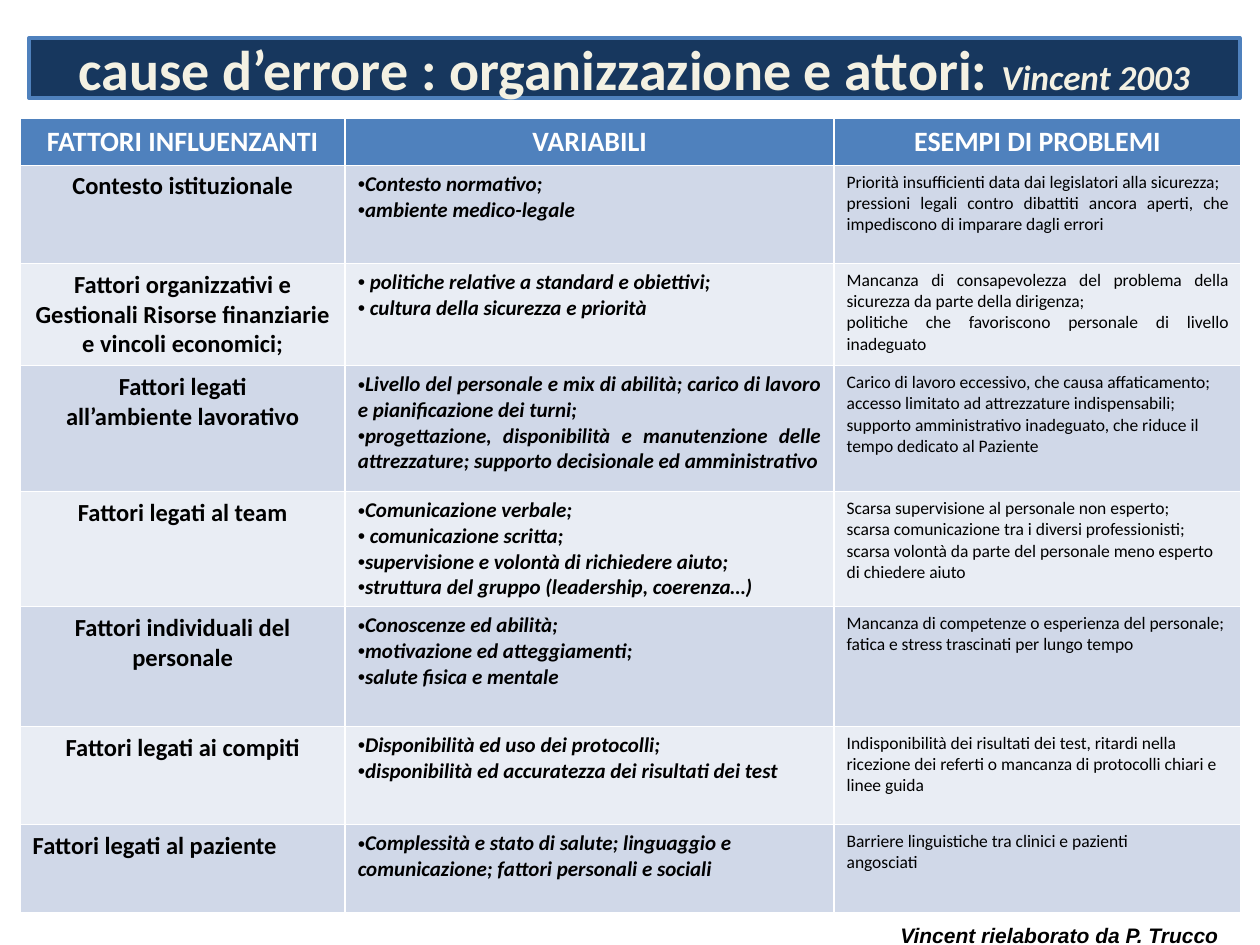
from pptx import Presentation
from pptx.dml.color import RGBColor
from pptx.enum.text import MSO_ANCHOR, MSO_AUTO_SIZE, PP_ALIGN
from pptx.util import Inches, Pt
from lxml.etree import SubElement
from pptx.oxml.ns import qn

LEFT, CENTER, RIGHT, JUSTIFY = (PP_ALIGN.LEFT, PP_ALIGN.CENTER,
                                PP_ALIGN.RIGHT, PP_ALIGN.JUSTIFY)
HEADERS = ["FATTORI INFLUENZANTI", "VARIABILI", "ESEMPI DI PROBLEMI"]
# Row height in inches, then the paragraphs of each column
ROWS = [
    (0.78, ["Contesto istituzionale"],
     ["Contesto normativo;", "ambiente medico-legale"],
     ["Priorità insufficienti data dai legislatori alla sicurezza;",
      "pressioni legali contro dibattiti ancora aperti, che impediscono di imparare dagli errori"]),
    (0.81, ["Fattori organizzativi e", "Gestionali Risorse finanziarie e vincoli economici;"],
     [" politiche relative a standard e obiettivi;", " cultura della sicurezza e priorità"],
     ["Mancanza di consapevolezza del problema della sicurezza da parte della dirigenza;",
      "politiche che favoriscono personale di livello inadeguato"]),
    (1.0, ["Fattori legati", "all’ambiente lavorativo"],
     ["Livello del personale e mix di abilità; carico di lavoro e pianificazione dei turni;",
      "progettazione, disponibilità e manutenzione delle attrezzature; "
      "supporto decisionale ed amministrativo"],
     ["Carico di lavoro eccessivo, che causa affaticamento; accesso limitato ad attrezzature "
      "indispensabili; supporto amministrativo inadeguato, che riduce il tempo dedicato al Paziente"]),
    (0.91, ["Fattori legati al team"],
     ["Comunicazione verbale;", " comunicazione scritta;",
      "supervisione e volontà di richiedere aiuto;",
      "struttura del gruppo (leadership, coerenza…)"],
     ["Scarsa supervisione al personale non esperto;",
      "scarsa comunicazione tra i diversi professionisti;",
      "scarsa volontà da parte del personale meno esperto di chiedere aiuto"]),
    (0.95, ["Fattori individuali del", "personale"],
     ["Conoscenze ed abilità;", "motivazione ed atteggiamenti;", "salute fisica e mentale"],
     ["Mancanza di competenze o esperienza del personale;",
      "fatica e stress trascinati per lungo tempo"]),
    (0.78, ["Fattori legati ai compiti"],
     ["Disponibilità ed uso dei protocolli;",
      "disponibilità ed accuratezza dei risultati dei test"],
     ["Indisponibilità dei risultati dei test, ritardi nella ricezione dei referti "
      "o mancanza di protocolli chiari e linee guida"]),
    (0.7, ["Fattori legati al paziente"],
     ["Complessità e stato di salute; linguaggio e comunicazione; fattori personali e sociali"],
     ["Barriere linguistiche tra clinici e pazienti", "angosciati"]),
]
HEADER_H = 0.36
COL_WIDTHS = [2.58, 3.88, 3.23]
# Size, bold, italic of each column
COL_STYLES = [(14, True, False), (12, True, True), (10, False, False)]
# Alignment of each column from top to bottom
COL_ALIGNS = [[CENTER] * 6 + [LEFT],
              [JUSTIFY] * 3 + [LEFT] * 4,
              [JUSTIFY] * 2 + [LEFT] * 5]


def rgb(color):
    return RGBColor.from_string(color)


def style(p, align, size, color, bold=True, italic=False, font="Calibri"):
    """Align a paragraph and format all its runs."""
    p.alignment = align
    for r in p.runs:
        f = r.font
        f.name, f.size, f.bold, f.italic = font, Pt(size), bold, italic
        f.color.rgb = rgb(color)


prs = Presentation()
prs.slide_width, prs.slide_height = Inches(10), Inches(7.5)
s = prs.slides.add_slide(prs.slide_layouts[5])

# Title bar
title = s.shapes.title
title.left, title.top = Inches(0.23), Inches(0.3)
title.width, title.height = Inches(9.61), Inches(0.48)
title.fill.solid()
title.fill.fore_color.rgb = rgb("17375E")
title.line.color.rgb = rgb("4F81BD")
title.line.width = Pt(2)
tf = title.text_frame
tf.auto_size = MSO_AUTO_SIZE.NONE
tf.vertical_anchor = MSO_ANCHOR.MIDDLE
p = tf.paragraphs[0]
p.add_run().text = "cause d’errore : organizzazione e attori: "
r = p.add_run()
r.text = "Vincent 2003"
style(p, CENTER, 32, "F4F1E3")
r.font.size, r.font.italic = Pt(20), True

# Table of factors
heights = [HEADER_H] + [row[0] for row in ROWS]
table = s.shapes.add_table(len(heights), len(COL_WIDTHS), Inches(0.16), Inches(0.94),
                           Inches(sum(COL_WIDTHS)), Inches(sum(heights))).table
for column, width in zip(table.columns, COL_WIDTHS):
    column.width = Inches(width)
for row, height in zip(table.rows, heights):
    row.height = Inches(height)

for j, header in enumerate(HEADERS):
    cell = table.cell(0, j)
    cell.text = header
    cell.fill.solid()
    cell.fill.fore_color.rgb = rgb("4F81BD")
    style(cell.text_frame.paragraphs[0], CENTER, 16, "FFFFFF")

for i, (_, *columns) in enumerate(ROWS):
    for j, lines in enumerate(columns):
        cell = table.cell(i + 1, j)
        cell.text = "\n".join(lines)
        cell.fill.solid()
        cell.fill.fore_color.rgb = rgb("E9EDF4" if i % 2 else "D0D8E8")
        size, bold, italic = COL_STYLES[j]
        for p in cell.text_frame.paragraphs:
            style(p, COL_ALIGNS[j][i], size, "000000", bold, italic)
            if HEADERS[j] == "VARIABILI":
                pPr = p._p.get_or_add_pPr()
                SubElement(pPr, qn("a:buFont"), typeface="Arial")
                SubElement(pPr, qn("a:buChar"), char="•")

# Source line
tf = s.shapes.add_textbox(Inches(4.77), Inches(7.27), Inches(5), Inches(0.3)).text_frame
tf.word_wrap = True
tf.text = "Vincent rielaborato da P. Trucco"
style(tf.paragraphs[0], RIGHT, 12, "000000", italic=True, font="Arial")

prs.save("out.pptx")
